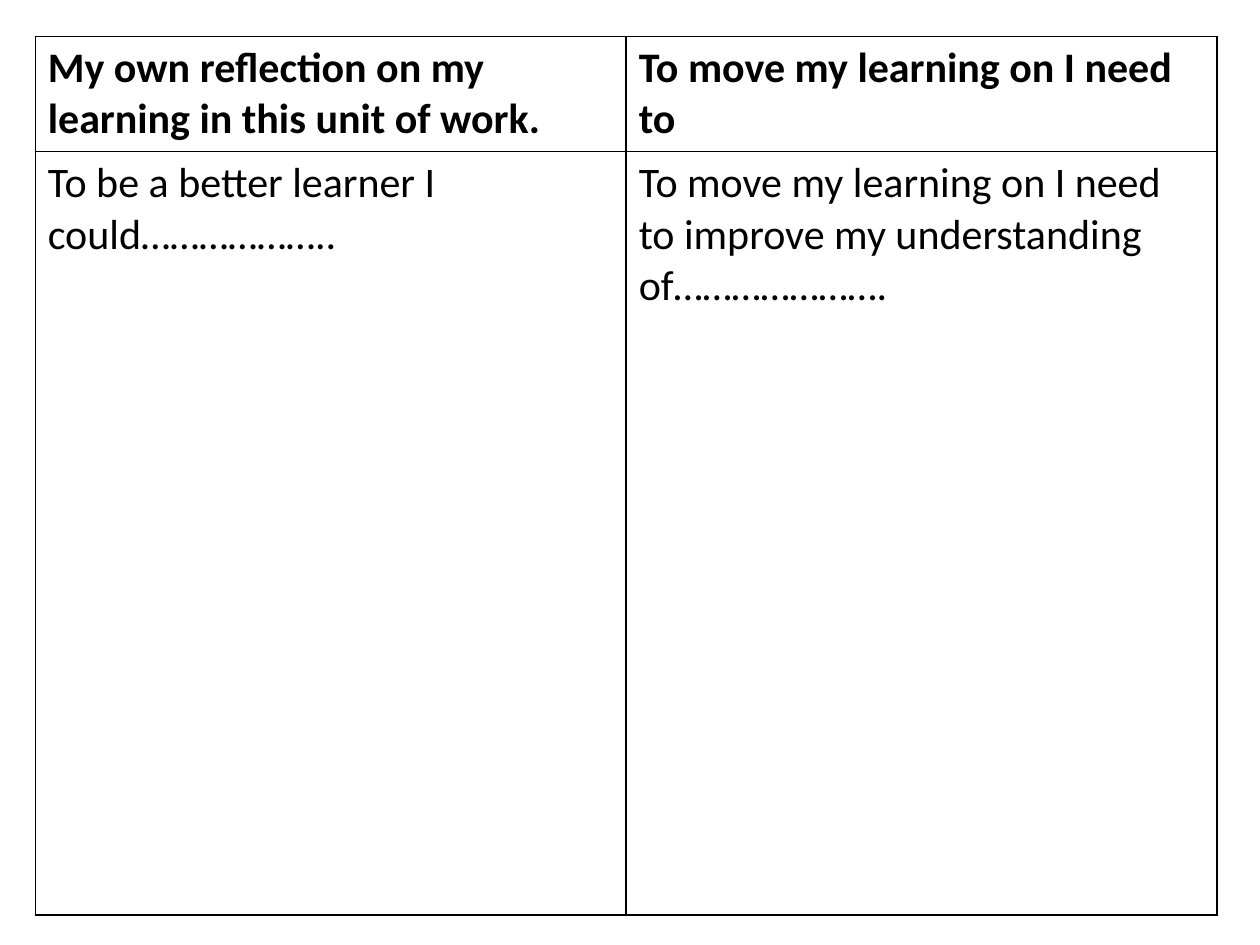
import pptx
import pptx.dml.color
import pptx.oxml
import pptx.oxml.ns
import pptx.util
from pptx.util import Inches


def color(hex_string):
    return pptx.dml.color.RGBColor.from_string(hex_string)


def add_borders(cell, hex_string):
    """Draw a 1 pt line on every side; lines must precede the cell fill."""
    properties = cell._tc.get_or_add_tcPr()
    for index, side in enumerate(("lnL", "lnR", "lnT", "lnB")):
        line = pptx.oxml.parse_xml(
            f'<a:{side} {pptx.oxml.ns.nsdecls("a")} w="{pptx.util.Pt(1)}">'
            f'<a:solidFill><a:srgbClr val="{hex_string}"/></a:solidFill></a:{side}>'
        )
        properties.insert(index, line)


presentation = pptx.Presentation()
presentation.slide_width = Inches(10)
presentation.slide_height = Inches(7.5)
slide = presentation.slides.add_slide(presentation.slide_layouts[6])

# Reflection table: a heading row above a tall writing row
rows = [
    ("My own reflection on my learning in this unit of work.",
     "To move my learning on I need to"),
    ("To be a better learner I could………………..",
     "To move my learning on I need to improve my understanding of………………….")
]
row_heights = [0.9, 6.06]
column_width = 4.69

table = slide.shapes.add_table(
    2, 2, Inches(0.28), Inches(0.29), Inches(2 * column_width), Inches(sum(row_heights))
).table
table.first_row = False
table.horz_banding = False
for column in table.columns:
    column.width = Inches(column_width)

# Cell text, fill and borders
for row_index, texts in enumerate(rows):
    table.rows[row_index].height = Inches(row_heights[row_index])
    for column_index, text in enumerate(texts):
        cell = table.cell(row_index, column_index)
        cell.text_frame.text = text
        font = cell.text_frame.paragraphs[0].runs[0].font
        font.name = "Calibri"
        font.size = pptx.util.Pt(24)
        font.bold = row_index == 0
        font.color.rgb = color("000000")
        cell.fill.solid()
        cell.fill.fore_color.rgb = color("FFFFFF")
        add_borders(cell, "000000")

presentation.save("out.pptx")
